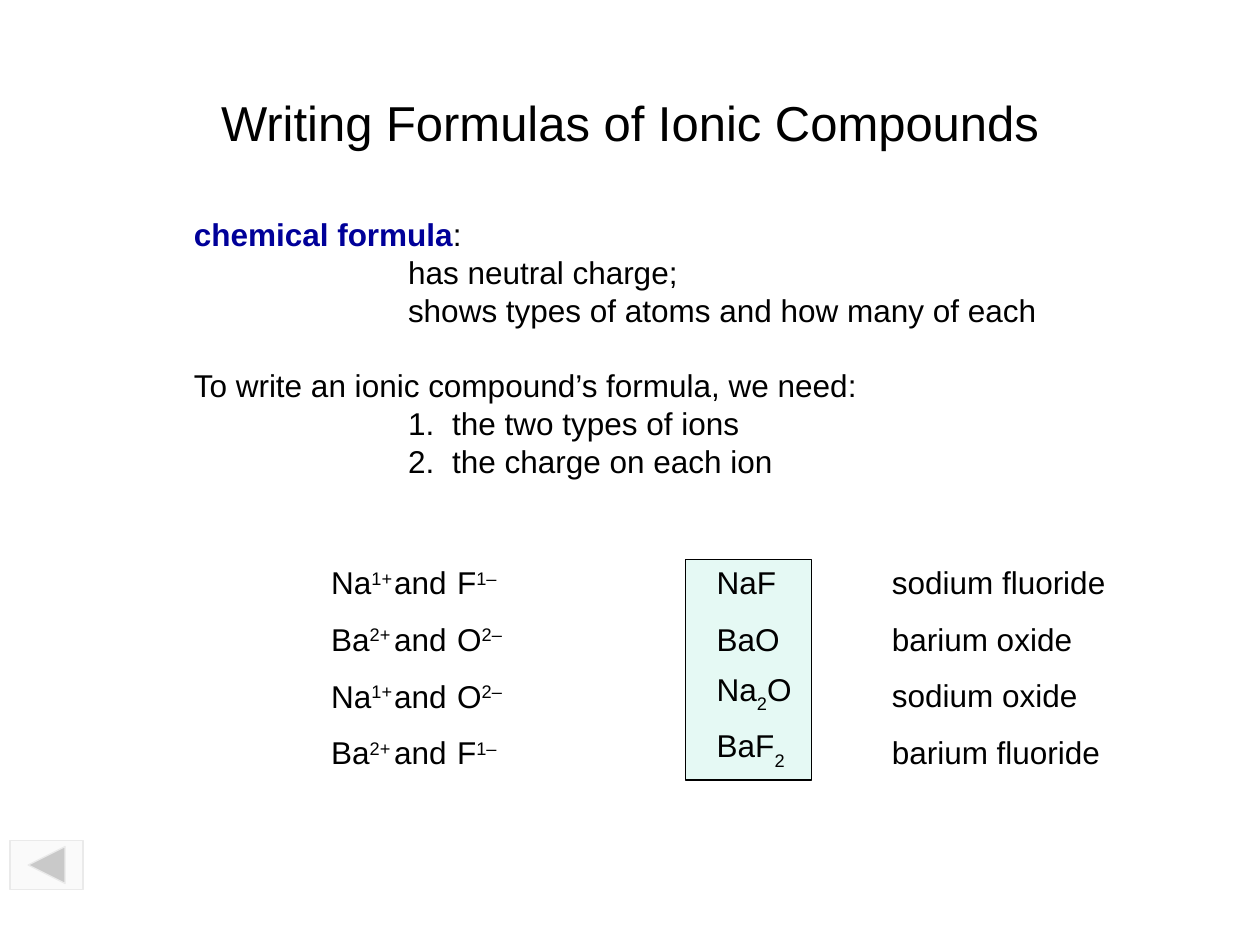
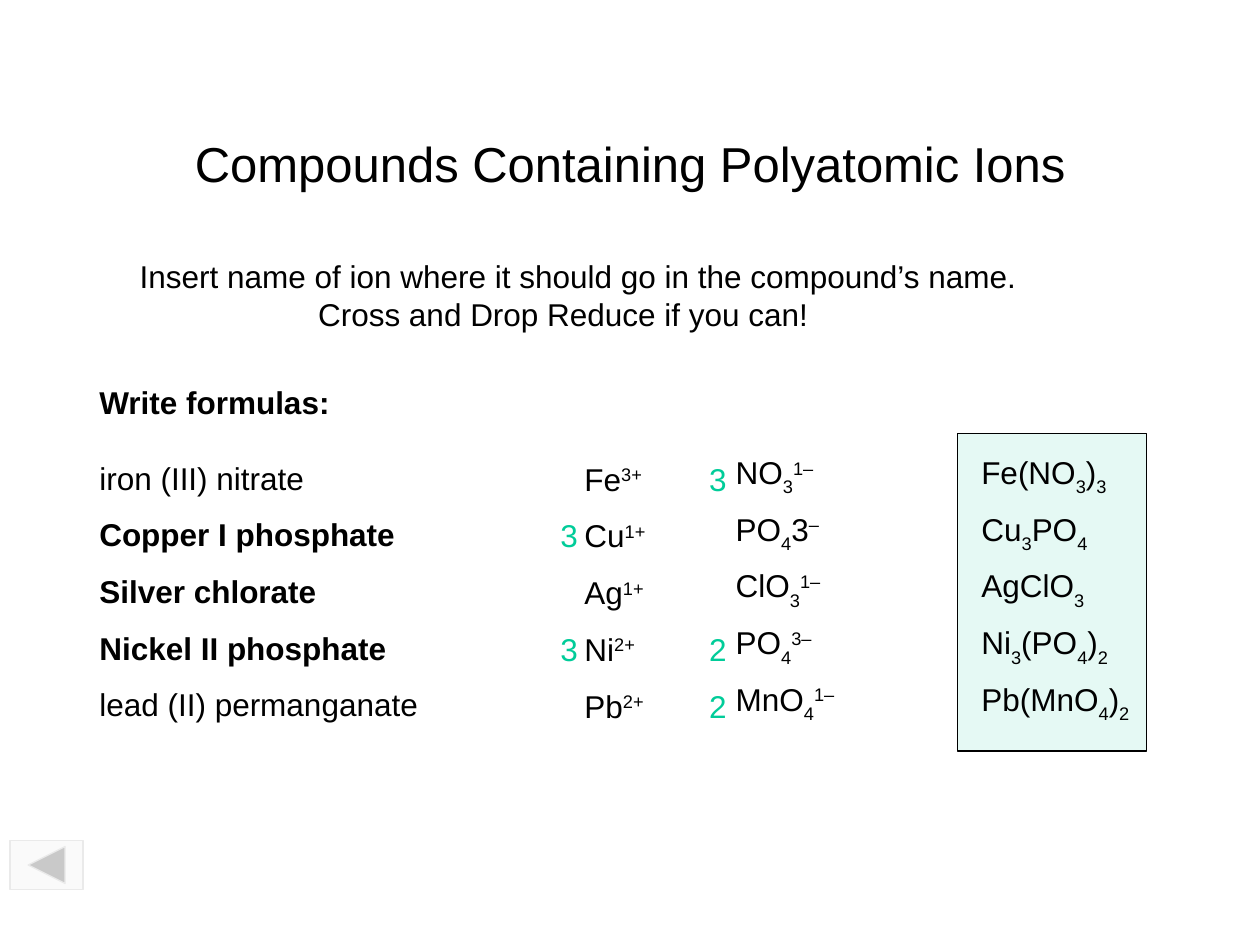
from lxml import etree
from pptx import Presentation
from pptx.dml.color import RGBColor
from pptx.enum.shapes import MSO_SHAPE
from pptx.enum.text import MSO_ANCHOR, PP_ALIGN
from pptx.oxml.ns import qn
from pptx.util import Inches, Pt

BLACK = RGBColor(0x00, 0x00, 0x00)
NAVY = RGBColor(0x00, 0x00, 0x99)
GREEN = RGBColor(0x00, 0xCC, 0x99)
PALE = RGBColor(0xF7, 0xF7, 0xF7)
GRAY = RGBColor(0xEA, 0xEA, 0xEA)
RECT = MSO_SHAPE.RECTANGLE
BACK = MSO_SHAPE.ACTION_BUTTON_BACK_OR_PREVIOUS
TOP = MSO_ANCHOR.TOP
MIDDLE = MSO_ANCHOR.MIDDLE
LEFT = PP_ALIGN.LEFT
CENTER = PP_ALIGN.CENTER

LINE = 21.6
GAP = 10.8
STEP = 0.45
HIGH = 0.4
SHIFT = {"_": "-30000", "^": "30000"}


class Deck:
    font = "Arial"
    size = 18

    def __init__(self):
        self.show = Presentation()
        self.show.slide_width = Inches(10)
        self.show.slide_height = Inches(7.5)
        self.slide = None

    def start(self, title, top):
        self.slide = self.show.slides.add_slide(self.show.slide_layouts[6])
        frame = self.box(0.75, top, 8.5, 1.25, MIDDLE)
        self.para(frame, title, size=28, align=CENTER)
        self.shape(BACK, 0.08, 6.67, 0.58, 0.39, PALE, 50, GRAY)

    def box(self, left, top, width, height, anchor=TOP):
        spot = [Inches(n) for n in (left, top, width, height)]
        frame = self.slide.shapes.add_textbox(*spot).text_frame
        frame.word_wrap = True
        frame.vertical_anchor = anchor
        return frame

    def para(self, frame, text, size=size, color=BLACK, bold=False,
             align=LEFT, before=0, margin=0, indent=0, stops=(), number=False):
        para = frame.paragraphs[0]
        if para.runs:
            para = frame.add_paragraph()
        props = para._p.get_or_add_pPr()
        props.set("marL", str(Inches(margin)))
        props.set("indent", str(Inches(indent)))
        if number:
            etree.SubElement(props, qn("a:buAutoNum"), type="arabicPeriod")
        if stops:
            tabs = etree.SubElement(props, qn("a:tabLst"))
            for stop in stops:
                etree.SubElement(tabs, qn("a:tab"), pos=str(Inches(stop)), algn="l")
        para.alignment = align
        para.space_before = Pt(before)
        if size == self.size:
            para.line_spacing = Pt(LINE)
        para.font.name = self.font
        para.font.size = Pt(size)
        para.font.bold = bold
        para.font.color.rgb = color
        for part in text.split("|"):
            run = para.add_run()
            run.text = part.lstrip("_^*")
            if part[0] in SHIFT:
                run._r.get_or_add_rPr().set("baseline", SHIFT[part[0]])
            elif part[0] == "*":
                run.font.bold = True
                run.font.color.rgb = NAVY

    def shape(self, kind, left, top, width, height, fill, alpha, line):
        spot = [Inches(n) for n in (left, top, width, height)]
        shape = self.slide.shapes.add_shape(kind, *spot)
        shape.shadow.inherit = False
        shape.fill.solid()
        shape.fill.fore_color.rgb = fill
        tint = shape._element.spPr.find(qn("a:solidFill"))[0]
        etree.SubElement(tint, qn("a:alpha"), val=str(alpha * 1000))
        shape.line.color.rgb = line
        shape.line.width = Pt(0.75)

    def panel(self, left, top, width, height):
        self.shape(RECT, left, top, width, height, GREEN, 10, BLACK)

    def column(self, left, top, width, items, color=BLACK):
        for row, item in enumerate(items):
            if item:
                frame = self.box(left, top + row * STEP, width, HIGH)
                self.para(frame, item, color=color)


def ionic(deck):
    deck.start("Writing Formulas of Ionic Compounds", 0.34)
    body = deck.box(1.44, 1.66, 7.2, 2.2)
    deck.para(body, "*chemical formula|:")
    deck.para(body, "has neutral charge;", margin=1.7)
    deck.para(body, "shows types of atoms and how many of each", margin=1.7)
    deck.para(body, "To write an ionic compound’s formula, we need:", before=LINE)
    for need in ("the two types of ions", "the charge on each ion"):
        deck.para(body, need, margin=2.05, indent=-0.35, number=True)

    top = 4.42
    deck.panel(5.44, 4.44, 1, 1.75)
    pairs = (("Na|^1+", "F|^1–"), ("Ba|^2+", "O|^2–"),
             ("Na|^1+", "O|^2–"), ("Ba|^2+", "F|^1–"))
    ions = deck.box(2.53, top, 2.6, 1.75)
    for row, (metal, other) in enumerate(pairs):
        deck.para(ions, f"{metal}|\tand\t{other}", before=GAP if row else 0,
                  stops=(0.82, 1.59))
    deck.column(5.59, top, 1, ("NaF", "BaO", "Na|_2|O", "BaF|_2"))
    deck.column(6.98, top, 2.1, ("sodium fluoride", "barium oxide",
                                 "sodium oxide", "barium fluoride"))


def poly(deck):
    deck.start("Compounds Containing Polyatomic Ions", 0.67)
    intro = deck.box(0.71, 1.99, 7.52, 0.71)
    deck.para(intro, "Insert name of ion where it should go in the compound’s name.",
              indent=0.3)
    deck.para(intro, "Cross and Drop Reduce if you can!", align=CENTER)

    top = 3.6
    deck.panel(7.6, 3.44, 1.5, 2.52)
    names = deck.box(0.69, 2.99, 3.23, 2.83)
    deck.para(names, "Write formulas:", bold=True)
    deck.para(names, "iron (III) nitrate", before=LINE)
    for name in ("Copper I phosphate", "Silver chlorate", "Nickel II phosphate"):
        deck.para(names, name, bold=True, before=GAP)
    deck.para(names, "lead (II) permanganate", before=GAP)

    deck.column(7.69, top, 1.5, ("Fe(NO|_3|)|_3", "Cu|_3|PO|_4", "AgClO|_3",
                                 "Ni|_3|(PO|_4|)|_2", "Pb(MnO|_4|)|_2"))
    deck.column(4.54, top, 0.9, ("Fe|^3+", "Cu|^1+", "Ag|^1+", "Ni|^2+", "Pb|^2+"))
    deck.column(5.74, top, 1.2, ("NO|_3|^1–", "PO|_4|3|^–", "ClO|_3|^1–",
                                 "PO|_4|^3–", "MnO|_4|^1–"))
    deck.column(4.35, top, 0.34, ("", "3", "", "3", ""), GREEN)
    deck.column(5.53, top, 0.34, ("3", "", "", "2", "2"), GREEN)


def main():
    deck = Deck()
    ionic(deck)
    poly(deck)
    deck.show.save("out.pptx")


if __name__ == "__main__":
    main()
